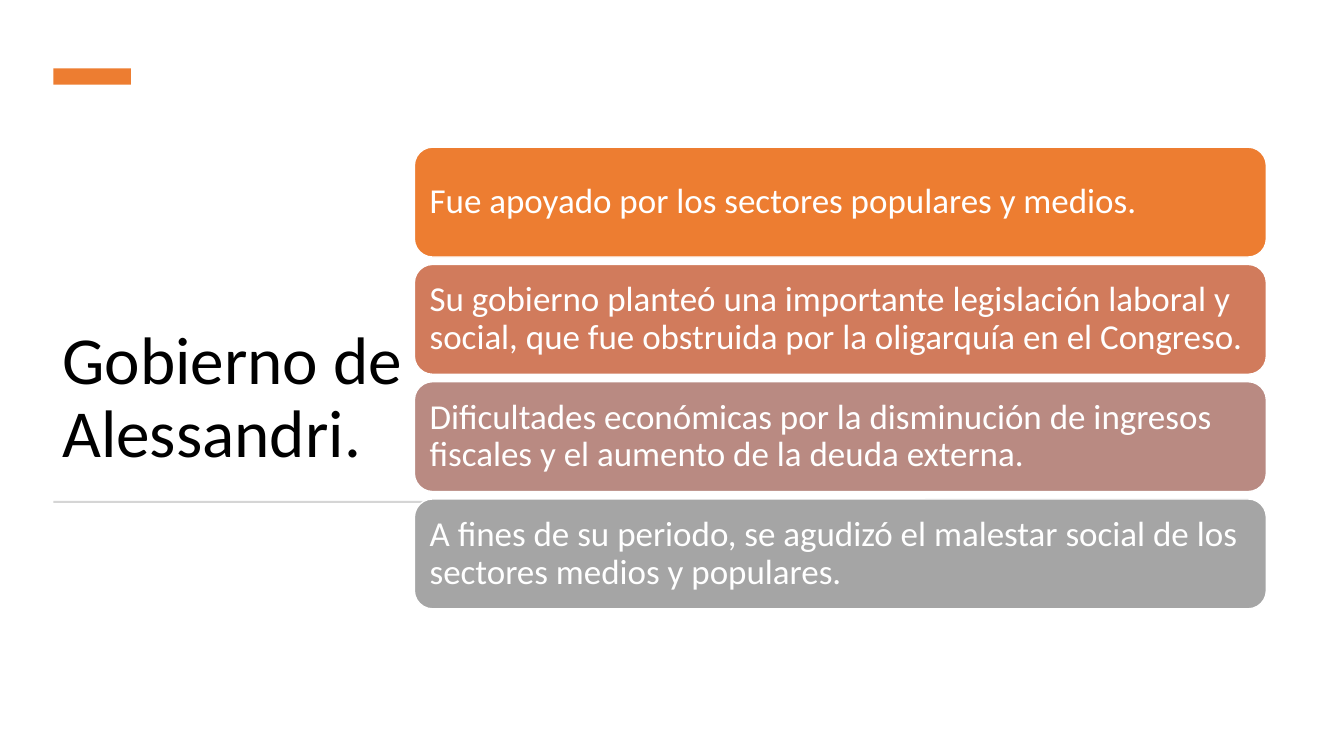
from pptx import Presentation
from pptx.dml.color import RGBColor
from pptx.enum.shapes import MSO_SHAPE
from pptx.enum.text import MSO_ANCHOR, PP_ALIGN
from pptx.util import Inches, Pt

RECT = MSO_SHAPE.RECTANGLE
ROUND = MSO_SHAPE.ROUNDED_RECTANGLE
MIDDLE, BOTTOM = MSO_ANCHOR.MIDDLE, MSO_ANCHOR.BOTTOM
LEFT = PP_ALIGN.LEFT

COLORS = {
    "black": "000000",
    "white": "FFFFFF",
    "orange": "ED7D31",
    "rust": "D17B5C",
    "rose": "B98A82",
    "gray": "A5A5A5",
    "rule": "D5D5D5",
}

CARDS = [
    ("orange", "Fue apoyado por los sectores populares y medios."),
    ("rust", "Su gobierno planteó una importante legislación laboral y social, "
             "que fue obstruida por la oligarquía en el Congreso."),
    ("rose", "Dificultades económicas por la disminución de ingresos fiscales "
             "y el aumento de la deuda externa."),
    ("gray", "A fines de su periodo, se agudizó el malestar social de los "
             "sectores medios y populares."),
]
CARD_TOP, CARD_SPAN = 1.46, 3.49


class Deck:
    def __init__(self, font):
        self.font = font
        self.prs = Presentation()
        self.prs.slide_width = Inches(13.33)
        self.prs.slide_height = Inches(7.5)
        self.slide = self.prs.slides.add_slide(self.prs.slide_layouts[6])

    def color(self, name):
        return RGBColor.from_string(COLORS[name])

    def label(self, shape, text, size, color, anchor, pad):
        """Fill a shape with one left-aligned paragraph; pad is (side, end)."""
        frame = shape.text_frame
        side, end = map(Inches, pad)
        para = frame.paragraphs[0]
        run = para.add_run()
        run.text = text
        formats = [
            (frame, {"word_wrap": True, "vertical_anchor": anchor,
                     "margin_left": side, "margin_right": side,
                     "margin_top": end, "margin_bottom": end}),
            (para, {"alignment": LEFT, "line_spacing": 0.9}),
            (run.font, {"name": self.font, "size": Pt(size)}),
        ]
        for target, values in formats:
            for key, value in values.items():
                setattr(target, key, value)
        run.font.color.rgb = self.color(color)

    def title(self, box, text):
        shape = self.slide.shapes.add_textbox(*map(Inches, box))
        self.label(shape, text, 48, "black", BOTTOM, (0.1, 0.05))

    def block(self, box, fill, kind=RECT):
        shape = self.slide.shapes.add_shape(kind, *map(Inches, box))
        shape.shadow.inherit = False
        shape.fill.solid()
        shape.fill.fore_color.rgb = self.color(fill)
        shape.line.fill.background()
        return shape

    def card(self, box, fill, text):
        shape = self.block(box, fill, ROUND)
        shape.line.color.rgb = self.color("white")
        shape.line.width = Pt(1)
        self.label(shape, text, 25, "white", MIDDLE, (0.1, 0.1))


def main():
    deck = Deck("Calibri")
    deck.title((0.52, 1.23, 4.4, 3.5), "Gobierno de Alessandri.")
    deck.block((0.53, 0.68, 0.77, 0.16), "orange")
    deck.block((0.53, 4.97, 4.35, 0.02), "rule")
    step = CARD_SPAN / (len(CARDS) - 1)
    for i, (fill, text) in enumerate(CARDS):
        deck.card((4.11, CARD_TOP + i * step, 8.45, 1.09), fill, text)
    deck.prs.save("out.pptx")


if __name__ == "__main__":
    main()
